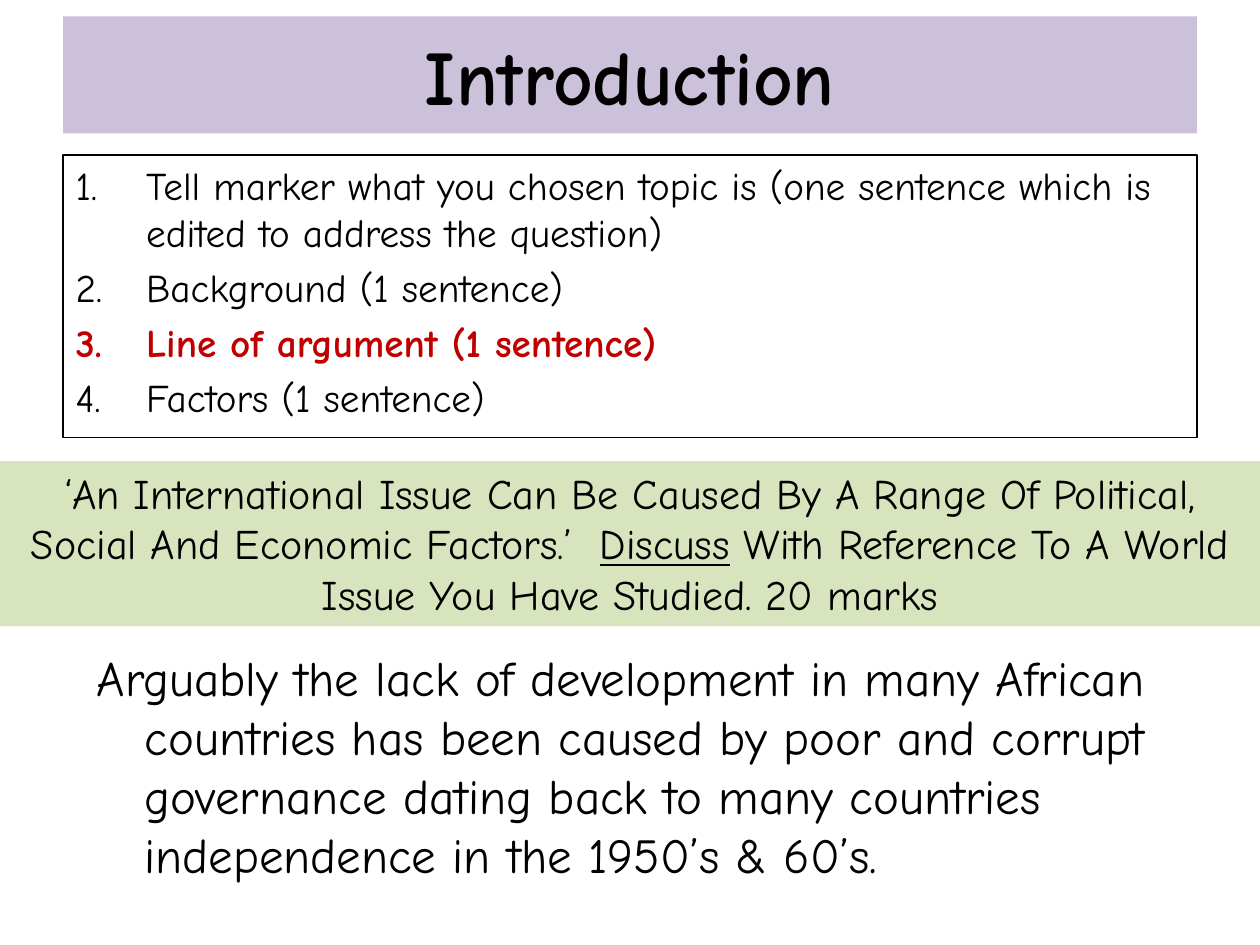
from lxml import etree
from pptx import Presentation
from pptx.dml.color import RGBColor
from pptx.enum.text import MSO_ANCHOR, MSO_AUTO_SIZE, PP_ALIGN
from pptx.oxml.ns import qn
from pptx.util import Inches, Pt

CENTER = PP_ALIGN.CENTER
MIDDLE = MSO_ANCHOR.MIDDLE
NO_AUTOFIT = MSO_AUTO_SIZE.NONE

FONT = "Comic Neue"
BLACK = RGBColor(0x00, 0x00, 0x00)
WHITE = RGBColor(0xFF, 0xFF, 0xFF)
RED = RGBColor(0xC0, 0x00, 0x00)
LILAC = RGBColor(0xCC, 0xC1, 0xDA)
GREEN = RGBColor(0xD7, 0xE4, 0xBD)

STEPS = [
    "Tell marker what you chosen topic is (one sentence which is edited to address the question)",
    "Background (1 sentence)",
    "Line of argument (1 sentence)",
    "Factors (1 sentence)",
]
HIGHLIGHTED_STEP = 2
QUESTION_START = (
    "‘An International Issue Can Be Caused By A Range Of Political, "
    "Social And Economic Factors.’  "
)
QUESTION_COMMAND = "Discuss"
QUESTION_END = " With Reference To A World Issue You Have Studied. 20 marks"
ARGUMENT = (
    "Arguably the lack of development in many African countries has been caused by "
    "poor and corrupt governance dating back to many countries independence in the "
    "1950’s & 60’s."
)


def add_text(paragraph, text, size, color=BLACK, bold=False, underline=False):
    run = paragraph.add_run()
    run.text = text
    font = run.font
    font.name = FONT
    font.size = Pt(size)
    font.color.rgb = color
    font.bold = bold
    font.underline = underline


def set_hanging_indent(paragraph, indent):
    properties = paragraph._p.get_or_add_pPr()
    properties.set("marL", str(indent))
    properties.set("indent", str(-indent))
    return properties


def number_paragraph(paragraph, indent):
    """Number the paragraph in the font of its own text."""
    properties = set_hanging_indent(paragraph, indent)
    etree.SubElement(properties, qn("a:buFontTx"))
    etree.SubElement(properties, qn("a:buAutoNum"), type="arabicPeriod")


def place(shape, left, top, width, height):
    shape.left, shape.top = Inches(left), Inches(top)
    shape.width, shape.height = Inches(width), Inches(height)


def fill_shape(shape, color):
    shape.fill.solid()
    shape.fill.fore_color.rgb = color


def format_title(title):
    place(title, 0.5, 0.13, 9, 0.93)
    fill_shape(title, LILAC)
    frame = title.text_frame
    frame.auto_size = NO_AUTOFIT
    frame.vertical_anchor = MIDDLE
    heading = frame.paragraphs[0]
    heading.alignment = CENTER
    add_text(heading, "Introduction", size=44, bold=True)


def format_steps(body):
    place(body, 0.5, 1.23, 9, 2.24)
    body.line.color.rgb = BLACK
    body.line.width = Pt(0.75)
    frame = body.text_frame
    frame.auto_size = NO_AUTOFIT
    for index, step in enumerate(STEPS):
        paragraph = frame.add_paragraph() if index else frame.paragraphs[0]
        number_paragraph(paragraph, Inches(0.56))
        highlighted = index == HIGHLIGHTED_STEP
        add_text(paragraph, step, size=22.4, bold=highlighted,
                 color=RED if highlighted else BLACK)


def add_filled_box(slide, left, top, width, height, color):
    """Add a filled text box and return its first paragraph."""
    box = slide.shapes.add_textbox(
        Inches(left), Inches(top), Inches(width), Inches(height))
    fill_shape(box, color)
    box.text_frame.word_wrap = True
    box.text_frame.auto_size = MSO_AUTO_SIZE.SHAPE_TO_FIT_TEXT
    return box.text_frame.paragraphs[0]


def main():
    presentation = Presentation()
    presentation.slide_width = Inches(10)
    presentation.slide_height = Inches(7.5)
    title_and_content = presentation.slide_layouts[1]
    slide = presentation.slides.add_slide(title_and_content)

    format_title(slide.shapes.title)
    format_steps(slide.placeholders[1])

    argument = add_filled_box(slide, 0.67, 5.09, 8.98, 1.99, WHITE)
    set_hanging_indent(argument, Inches(0.38))
    add_text(argument, ARGUMENT, size=28)

    question = add_filled_box(slide, 0, 3.66, 10, 1.31, GREEN)
    question.alignment = CENTER
    add_text(question, QUESTION_START, size=24)
    add_text(question, QUESTION_COMMAND, size=24, underline=True)
    add_text(question, QUESTION_END, size=24)

    presentation.save("out.pptx")


if __name__ == "__main__":
    main()
